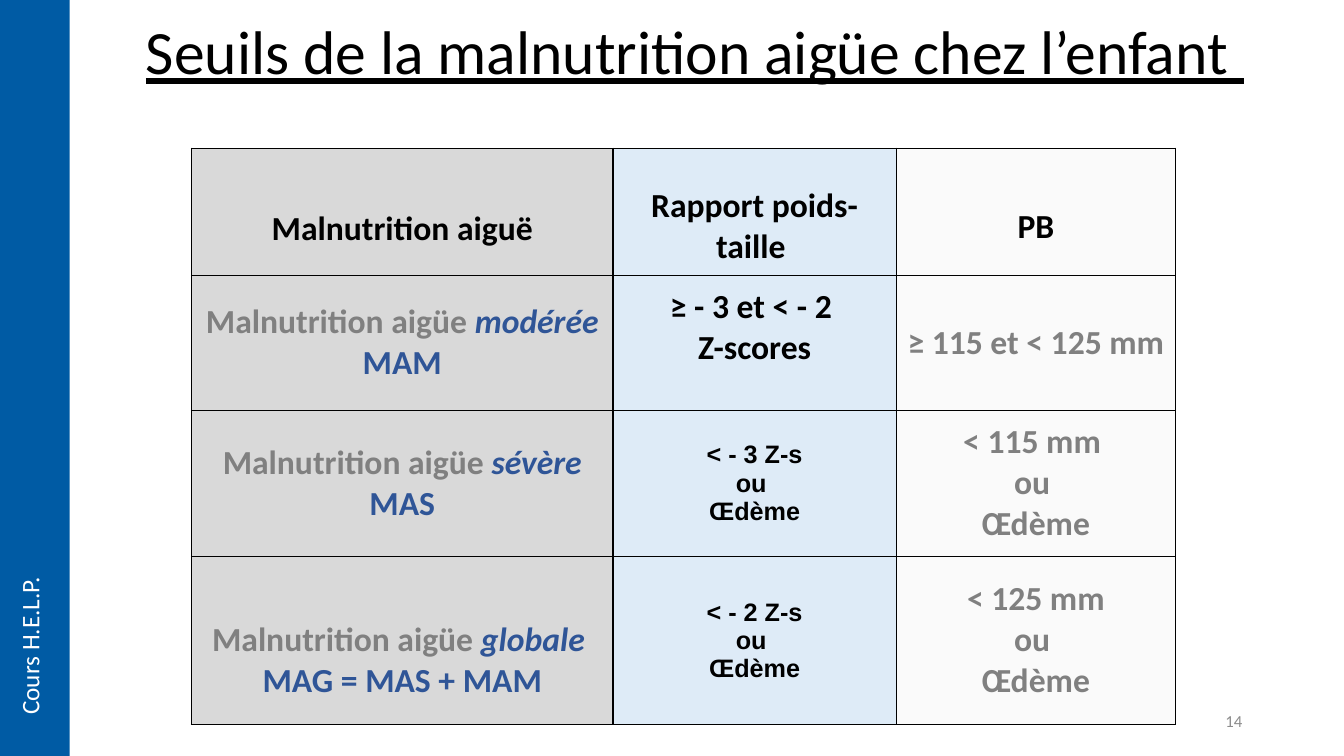
from dataclasses import dataclass

from lxml.etree import SubElement
from pptx import Presentation
from pptx.dml.color import RGBColor
from pptx.enum.shapes import MSO_SHAPE
from pptx.enum.text import MSO_ANCHOR, MSO_AUTO_SIZE, PP_ALIGN
from pptx.oxml import parse_xml
from pptx.oxml.ns import nsdecls, qn
from pptx.util import Inches, Pt


@dataclass(frozen=True)
class Theme:
    black: str = "000000"
    white: str = "FFFFFF"
    grey: str = "808080"
    page_grey: str = "8C8C8C"
    emphasis: str = "2F5597"
    sidebar: str = "005BA4"
    column_fills: tuple = ("D9D9D9", "DEEBF7", "FAFAFA")
    body_font: str = "Calibri"
    score_font: str = "Arial"
    title_size: int = 44
    table_size: int = 24
    small_size: int = 18
    page_size: int = 12


@dataclass(frozen=True)
class Span:
    text: str
    color: str
    size: int = Theme.table_size
    font: str = Theme.body_font
    bold: bool = True
    italic: bool = False
    underline: bool = False


@dataclass(frozen=True)
class Entry:
    paragraphs: list
    extra_top: float = 0
    extra_bottom: float = 0


class SlideBuilder:
    def __init__(self, deck, theme):
        self.theme = theme
        self.column = deck.slide_width / 100
        self.row = deck.slide_height / 100
        self.page = deck.slides.add_slide(deck.slide_layouts[6])

    def place(self, left, top, width, height):
        return (round(left * self.column), round(top * self.row),
                round(width * self.column), round(height * self.row))

    def fill_text(self, frame, paragraphs, align):
        for index, spans in enumerate(paragraphs):
            para = frame.paragraphs[0] if index == 0 else frame.add_paragraph()
            para.alignment = align
            for span in spans:
                run = para.add_run()
                run.text = span.text
                run.font.name = span.font
                run.font.size = Pt(span.size)
                run.font.bold = span.bold
                run.font.italic = span.italic
                run.font.underline = span.underline
                run.font.color.rgb = RGBColor.from_string(span.color)

    def text(self, area, span, align, anchor):
        box = self.page.shapes.add_textbox(*self.place(*area))
        frame = box.text_frame
        frame.word_wrap = True
        frame.vertical_anchor = anchor
        self.fill_text(frame, [[span]], align)
        return frame

    def title(self, area, wording):
        span = Span(wording, self.theme.black, self.theme.title_size,
                    bold=False, underline=True)
        frame = self.text(area, span, PP_ALIGN.CENTER, MSO_ANCHOR.BOTTOM)
        frame.paragraphs[0].line_spacing = 0.9

    def vertical_label(self, area, wording):
        span = Span(wording, self.theme.white, self.theme.small_size, bold=False)
        frame = self.text(area, span, PP_ALIGN.LEFT, MSO_ANCHOR.TOP)
        frame.word_wrap = False
        frame.auto_size = MSO_AUTO_SIZE.SHAPE_TO_FIT_TEXT
        frame._txBody.find(qn("a:bodyPr")).set("vert", "vert270")

    def page_number(self, area, wording):
        span = Span(wording, self.theme.page_grey, self.theme.page_size, bold=False)
        self.text(area, span, PP_ALIGN.RIGHT, MSO_ANCHOR.MIDDLE)

    def band(self, area, color):
        shape = self.page.shapes.add_shape(MSO_SHAPE.RECTANGLE, *self.place(*area))
        shape.shadow.inherit = False
        shape.fill.solid()
        shape.fill.fore_color.rgb = RGBColor.from_string(color)
        shape.line.fill.background()

    def border(self, cell):
        properties = cell._tc.get_or_add_tcPr()
        for index, side in enumerate(("lnL", "lnR", "lnT", "lnB")):
            line = parse_xml(f'<a:{side} {nsdecls("a")} w="{Pt(1)}"/>')
            fill = SubElement(line, qn("a:solidFill"))
            SubElement(fill, qn("a:srgbClr")).set("val", self.theme.black)
            properties.insert(index, line)

    def table(self, left, top, widths, heights, rows):
        area = self.place(left, top, sum(widths), sum(heights))
        table = self.page.shapes.add_table(len(heights), len(widths), *area).table
        table.first_row = False
        table.horz_banding = False
        for column, width in zip(table.columns, widths):
            column.width = round(width * self.column)
        for row, height in zip(table.rows, heights):
            row.height = round(height * self.row)
        for row, entries in zip(table.rows, rows):
            for cell, entry, color in zip(row.cells, entries, self.theme.column_fills):
                cell.fill.solid()
                cell.fill.fore_color.rgb = RGBColor.from_string(color)
                self.border(cell)
                cell.vertical_anchor = MSO_ANCHOR.MIDDLE
                cell.margin_left = cell.margin_right = Inches(0.06)
                cell.margin_top = round(Inches(0.04) + entry.extra_top * self.row)
                cell.margin_bottom = round(Inches(0.04) + entry.extra_bottom * self.row)
                self.fill_text(cell.text_frame, entry.paragraphs, PP_ALIGN.CENTER)


def lines(color, *wordings, **style):
    return [[Span(wording, color, **style)] for wording in wordings]


def threshold_rows(theme):
    def header(wording, extra_top):
        return Entry(lines(theme.black, wording), extra_top)

    def named(degree):
        return [Span("Malnutrition aigüe ", theme.grey),
                Span(degree + " ", theme.emphasis, italic=True)]

    def score(limit):
        return Entry(lines(theme.black, limit, "ou ", "Œdème",
                           size=theme.small_size, font=theme.score_font))

    def arm(limit):
        return Entry(lines(theme.grey, limit, "ou ", "Œdème"))

    return [
        [header("Malnutrition aiguë", 4.6),
         header("Rapport poids-taille ", 4),
         header("PB", 4)],
        [Entry([named("modérée") + [Span("MAM", theme.emphasis)]]),
         Entry(lines(theme.black, "≥ - 3 et < - 2 ", "Z-scores"), extra_bottom=4),
         Entry(lines(theme.grey, "≥ 115 et < 125 mm"))],
        [Entry([named("sévère") + [Span("MAS", theme.emphasis)]]),
         score("< - 3 Z-s"),
         arm("< 115 mm ")],
        [Entry([named("globale"), [Span("MAG = MAS + MAM", theme.emphasis)]], 5.4),
         score("< - 2 Z-s"),
         arm("< 125 mm")],
    ]


def main():
    deck = Presentation()
    deck.slide_width = Inches(13.33)
    deck.slide_height = Inches(7.5)
    theme = Theme()
    builder = SlideBuilder(deck, theme)
    builder.title((5.18, -4.4, 93.02, 16.67),
                  "Seuils de la malnutrition aigüe chez l’enfant ")
    builder.table(14.25, 19.6, (31.36, 21.08, 20.78),
                  (16.8, 17.87, 19.33, 22.27), threshold_rows(theme))
    builder.band((0, 0, 5.18, 100), theme.sidebar)
    builder.vertical_label((0.68, 74.8, 3.75, 21.07), "Cours H.E.L.P.")
    builder.page_number((70.67, 92.67, 22.5, 5.33), "14")
    deck.save("out.pptx")


if __name__ == "__main__":
    main()
